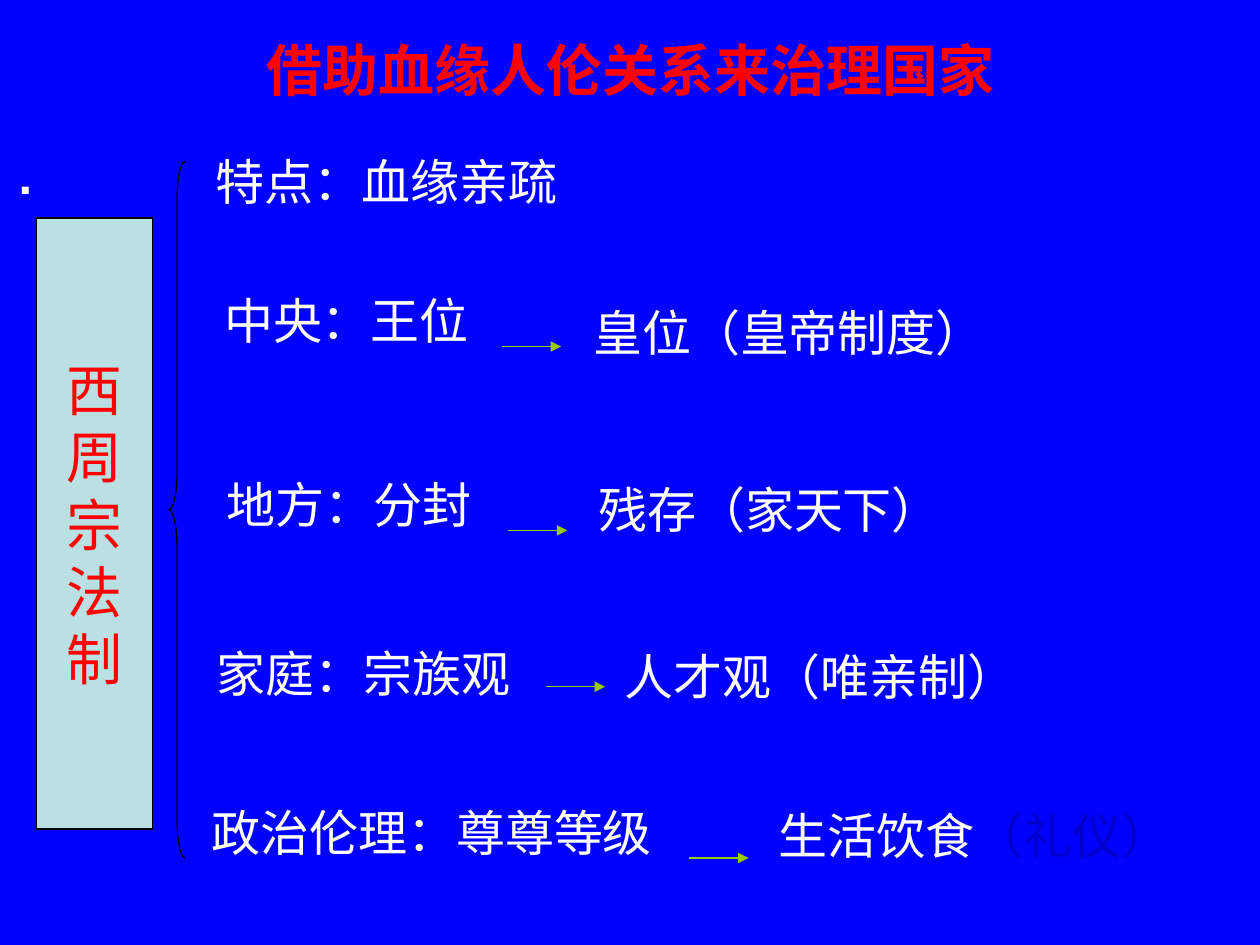
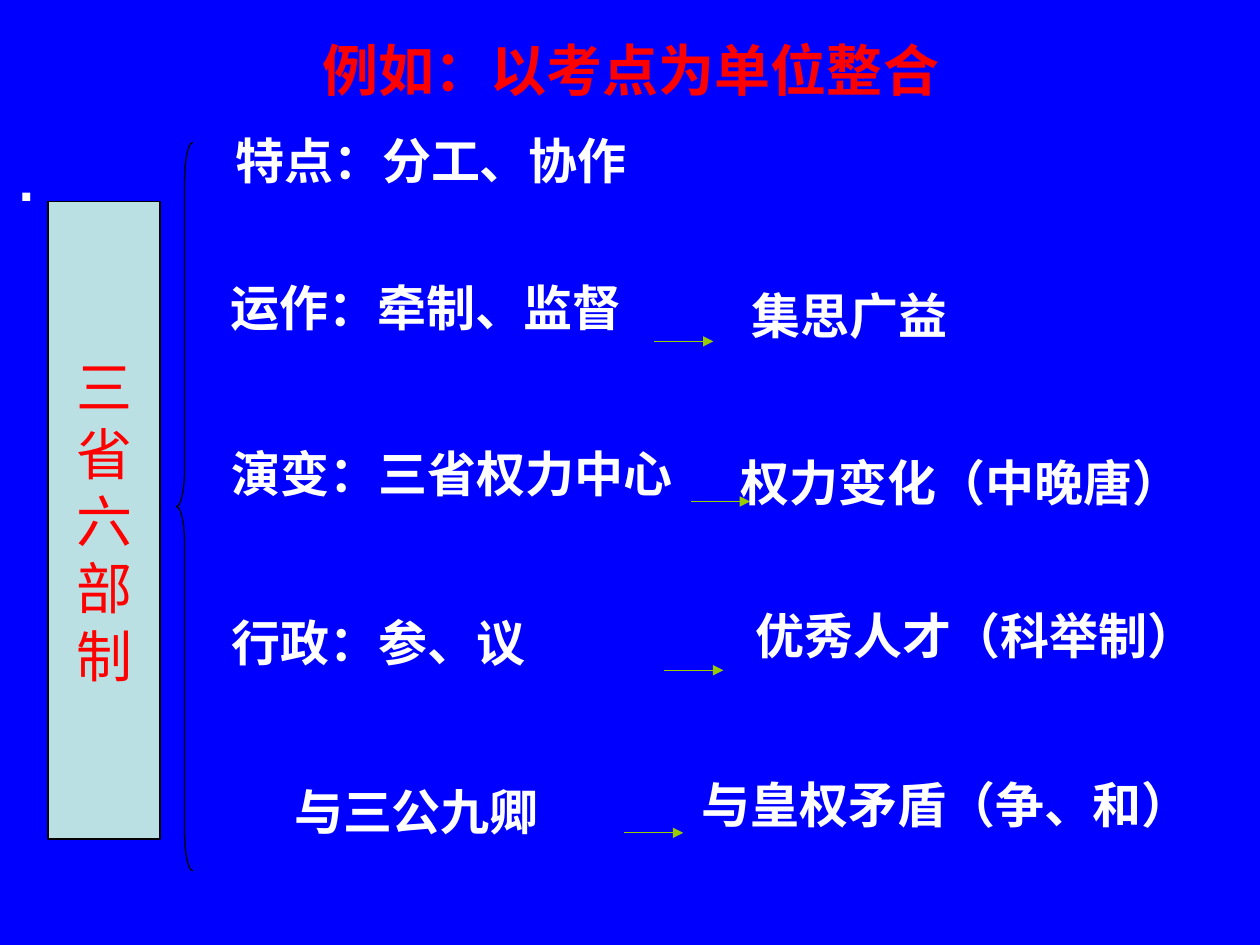
from dataclasses import dataclass

from lxml import etree
from pptx import Presentation
from pptx.dml.color import RGBColor
from pptx.enum import shapes, text
from pptx.oxml import ns
from pptx.util import Pt


@dataclass(frozen=True)
class Theme:
    font: str = "Arial"
    back: str = "0000FF"
    accent: str = "FF0000"
    body: str = "FFFFFF"
    faint: str = "0000CC"
    panel: str = "BBE0E3"
    outline: str = "000000"
    arrow: str = "99CC00"
    heading_size: int = 32
    body_size: int = 28
    hairline: float = 0.75


T = Theme()
TITLE_BOX = (1.4, 2.2, 718.6, 74.9)
ROW_HEIGHT = 41
ARROW_LENGTH = 34

# Each row: (cause, arrow start or None, result or None)
# Each cause or result: (left, top, width, main text[, faint text])
SLIDES = [
    dict(
        title="借助血缘人伦关系来治理国家",
        topic="西周宗法制",
        topic_box=(20.9, 124.6, 66.2, 349.2),
        brace_box=(96.5, 92.2, 9.4, 398.2),
        dot_size=28,
        bold=False,
        rows=[
            ((115.9, 82.8, 237.6, "特点：血缘亲疏"), None, None),
            ((121, 162.7, 180.7, "中央：王位"), (286.6, 198),
             (331.9, 169.2, 250.6, "皇位（皇帝制度）")),
            ((122.4, 267.8, 180.7, "地方：分封"), (290.2, 303.1),
             (334.8, 270.7, 250.6, "残存（家天下）")),
            ((116.6, 364.3, 193, "家庭：宗族观"), (311.8, 392.4),
             (349.9, 365.8, 250.6, "人才观（唯亲制）")),
            ((113.8, 455, 292.3, "政治伦理：尊尊等级"), (393.8, 490.3),
             (437.8, 456.5, 262.1, "生活饮食", "（礼仪）")),
        ],
    ),
    dict(
        title="例如：以考点为单位整合",
        topic="三省六部制",
        topic_box=(27.4, 115.2, 64.1, 364.3),
        brace_box=(100.8, 81.4, 9.4, 416.2),
        dot_size=32,
        bold=True,
        rows=[
            ((127.4, 71.3, 274.3, "特点：分工、协作"), None, None),
            ((124.6, 154.8, 254.2, "运作：牵制、监督"), (373.7, 195.1),
             (422.6, 159.8, 144.7, "集思广益")),
            ((125.3, 249.8, 270, "演变：三省权力中心"), (394.6, 286.6),
             (416.2, 254.9, 267.1, "权力变化（中晚唐）")),
            ((125.3, 346.3, 252, "行政：参、议"), (379.4, 383),
             (424.8, 342.7, 267.8, "优秀人才（科举制）")),
            ((161, 442.8, 239, "与三公九卿"), (356.4, 475.9),
             (393.8, 439.2, 298.8, "与皇权矛盾（争、和）")),
        ],
    ),
]


def rgb(code):
    return RGBColor.from_string(code)


def points(*values):
    return [Pt(v) for v in values]


def style(p, size, color, bold=False):
    f = p.font
    f.name, f.size, f.bold = T.font, Pt(size), bold
    f.color.rgb = rgb(color)


def add_title(s, words):
    sp = s.shapes.title
    sp.left, sp.top, sp.width, sp.height = points(*TITLE_BOX)
    tf = sp.text_frame
    tf.text = words
    tf.vertical_anchor = text.MSO_ANCHOR.MIDDLE
    p = tf.paragraphs[0]
    p.alignment = text.PP_ALIGN.CENTER
    style(p, T.heading_size, T.accent, True)


def add_text(s, box, words, size, bold, faint=""):
    tf = s.shapes.add_textbox(*points(*box)).text_frame
    p = tf.paragraphs[0]
    p.add_run().text = words
    style(p, size, T.body, bold)
    if faint:
        r = p.add_run()
        r.text = faint
        r.font.color.rgb = rgb(T.faint)


def add_outlined(s, kind, box):
    sp = s.shapes.add_shape(kind, *points(*box))
    sp.shadow.inherit = False
    sp.fill.background()
    sp.line.color.rgb = rgb(T.outline)
    sp.line.width = Pt(T.hairline)
    return sp


def add_topic(s, box, words):
    """Panel with one character per line."""
    sp = add_outlined(s, shapes.MSO_SHAPE.RECTANGLE, box)
    sp.fill.solid()
    sp.fill.fore_color.rgb = rgb(T.panel)
    tf = sp.text_frame
    tf.word_wrap = False
    tf.vertical_anchor = text.MSO_ANCHOR.MIDDLE
    tf.text = "\n".join(words)
    for p in tf.paragraphs:
        p.alignment = text.PP_ALIGN.CENTER
        style(p, T.heading_size, T.accent)


def add_arrow(s, x, y):
    line = s.shapes.add_connector(
        shapes.MSO_CONNECTOR.STRAIGHT, *points(x, y, x + ARROW_LENGTH, y))
    line.line.color.rgb = rgb(T.arrow)
    line.line.width = Pt(T.hairline)
    etree.SubElement(line.line._get_or_add_ln(), ns.qn("a:tailEnd"), type="triangle")
    etree.SubElement(line._element.spPr, ns.qn("a:effectLst"))


def add_entry(s, entry, bold):
    left, top, width, *words = entry
    add_text(s, (left, top, width, ROW_HEIGHT), words[0], T.body_size, bold, *words[1:])


def build_slide(prs, c):
    s = prs.slides.add_slide(prs.slide_layouts[5])
    add_title(s, c["title"])
    add_text(s, (3.6, 79.6, 40, 45), ".", c["dot_size"], True)
    add_topic(s, c["topic_box"], c["topic"])
    brace = add_outlined(s, shapes.MSO_SHAPE.LEFT_BRACE, c["brace_box"])
    brace.adjustments[0] = 2.3
    for cause, start, result in c["rows"]:
        add_entry(s, cause, c["bold"])
        if result:
            add_arrow(s, *start)
            add_entry(s, result, c["bold"])


def main():
    prs = Presentation()
    prs.slide_width, prs.slide_height = points(720, 540)
    fill = prs.slide_master.background.fill
    fill.solid()
    fill.fore_color.rgb = rgb(T.back)
    for content in SLIDES:
        build_slide(prs, content)
    prs.save("out.pptx")


if __name__ == "__main__":
    main()
